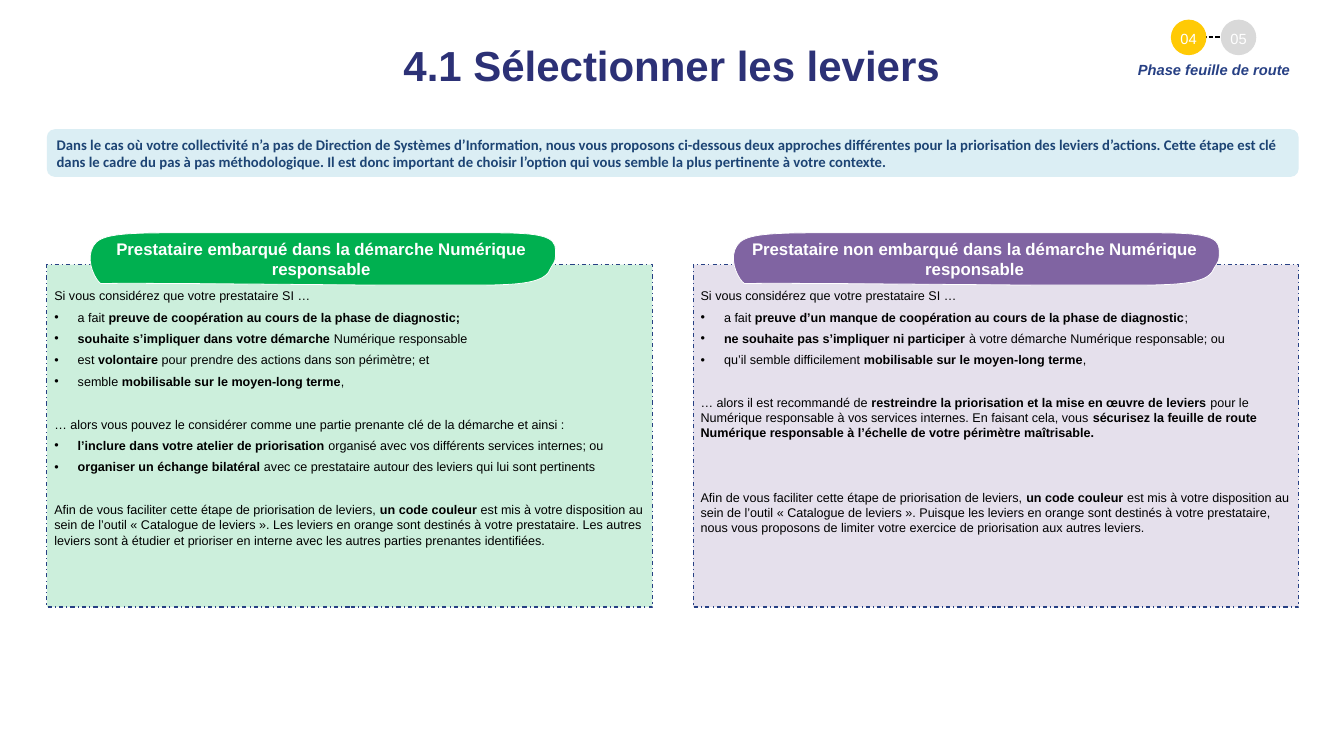
import pptx
import pptx.util
import pptx.dml.color
import pptx.enum.dml
import pptx.enum.shapes
import pptx.enum.text
import pptx.oxml.ns
from lxml import etree

Inches = pptx.util.Inches
Pt = pptx.util.Pt
RGBColor = pptx.dml.color.RGBColor
SHAPE = pptx.enum.shapes.MSO_SHAPE
DASH = pptx.enum.dml.MSO_LINE
ALIGN = pptx.enum.text.PP_ALIGN
ANCHOR = pptx.enum.text.MSO_ANCHOR
qn = pptx.oxml.ns.qn

WHITE = RGBColor(0xFF, 0xFF, 0xFF)
BLACK = RGBColor(0x00, 0x00, 0x00)
INDIGO = RGBColor(0x2C, 0x31, 0x76)
BLUE = RGBColor(0x27, 0x40, 0x84)
NAVY = RGBColor(0x1D, 0x44, 0x74)
PALE = RGBColor(0xDB, 0xEE, 0xF4)
GREEN = RGBColor(0x00, 0xB0, 0x50)
PURPLE = RGBColor(0x80, 0x64, 0xA2)
YELLOW = RGBColor(0xFF, 0xCA, 0x05)
GREY = RGBColor(0xD9, 0xD9, 0xD9)

SPACE = 6  # points before a paragraph
SKIP = 20.4  # points for each line left free

# Outline of a panel heading: x as a share of its width, y in inches.
# A single point is a straight side, three points are a Bézier curve.
START = (1, 0.23)
SIDES = [
    [(1, 0.37), (1, 0.36), (0.99, 0.46)],
    [(0.98, 0.64), (0.94, 0.69), (0.84, 0.69)],
    [(0.63, 0.69)],
    [(0.53, 0.69), (0.13, 0.66), (0.02, 0.67)],
    [(0.01, 0.63), (-0.01, 0.41), (0, 0.23)],
    [(0.01, 0.06), (0.03, 0), (0.16, 0)],
    [(0.87, 0)],
    [(0.97, 0), (1, 0.05), (1, 0.23)],
]

INTRO = (
    "Dans le cas où votre collectivité n’a pas de Direction de Systèmes d’Information, "
    "nous vous proposons ci-dessous deux approches différentes pour la priorisation des "
    "leviers d’actions. Cette étape est clé dans le cadre du pas à pas méthodologique. Il est "
    "donc important de choisir l’option qui vous semble la plus pertinente à votre contexte."
)
OPENING = "Si vous considérez que votre prestataire SI …"
COLOURS = (
    "Afin de vous faciliter cette étape de priorisation de leviers, **un code couleur **est mis "
    "à votre disposition au sein de l’outil « Catalogue de leviers ». "
)

# Each paragraph: free lines before it, bulleted or not, text with **bold** parts.
INSIDE = [
    (0, False, OPENING),
    (0, True, "a fait **preuve de coopération au cours de la phase de diagnostic;**"),
    (0, True, "**souhaite s’impliquer dans votre démarche **Numérique responsable"),
    (0, True, "est **volontaire** pour prendre des actions dans son périmètre; et"),
    (0, True, "semble **mobilisable sur le moyen-long terme**,"),
    (1, False, "… alors vous pouvez le considérer comme une partie prenante clé de la démarche "
               "et ainsi :"),
    (0, True, "**l’inclure dans votre atelier de priorisation **organisé avec vos différents "
              "services internes; ou"),
    (0, True, "**organiser un échange bilatéral **avec ce prestataire autour des leviers qui "
              "lui sont pertinents"),
    (1, False, COLOURS + "Les leviers en orange sont destinés à votre prestataire. Les autres "
               "leviers sont à étudier et prioriser en interne avec les autres parties "
               "prenantes identifiées."),
]
OUTSIDE = [
    (0, False, OPENING),
    (0, True, "a fait **preuve d’un manque de coopération au cours de la phase de "
              "diagnostic**;"),
    (0, True, "**ne souhaite pas s’impliquer ni participer **à votre démarche Numérique "
              "responsable; ou"),
    (0, True, "qu’il semble difficilement **mobilisable sur le moyen-long terme**,"),
    (1, False, "… alors il est recommandé de **restreindre la priorisation et la mise en œuvre "
               "de leviers **pour le Numérique responsable à vos services internes. En faisant "
               "cela, vous **sécurisez la feuille de route Numérique responsable à l’échelle de "
               "votre périmètre maîtrisable.**"),
    (2, False, COLOURS + "Puisque les leviers en orange sont destinés à votre prestataire, nous "
               "vous proposons de limiter votre exercice de priorisation aux autres leviers."),
]


def style(font, size, color, bold=False, italic=False, name="Arial"):
    font.name, font.size, font.bold, font.italic = name, Pt(size), bold, italic
    font.color.rgb = color


def label(shape, text, size, color, align=ALIGN.CENTER, **looks):
    frame = shape.text_frame
    frame.word_wrap = True
    frame.text = text
    para = frame.paragraphs[0]
    para.alignment = align
    style(para.runs[0].font, size, color, **looks)
    return frame


def block(shapes, kind, box, fill):
    """Add a filled shape without line or shadow."""
    shape = shapes.add_shape(kind, *map(Inches, box))
    shape.shadow.inherit = False
    shape.fill.solid()
    shape.fill.fore_color.rgb = fill
    shape.line.fill.background()
    return shape


def inset(frame, left, top, right, bottom):
    frame.margin_left, frame.margin_top = Inches(left), Inches(top)
    frame.margin_right, frame.margin_bottom = Inches(right), Inches(bottom)


def title(slide, box):
    head = slide.shapes.title
    head.left, head.top, head.width, head.height = map(Inches, box)
    frame = label(head, "4.1 Sélectionner les leviers", 40, INDIGO, bold=True)
    frame.vertical_anchor = ANCHOR.TOP
    inset(frame, 0, 0, 0, 0)


def phase(slide, box):
    """Add the step dots and, below them, the name of the phase."""
    left, top, width, height = box
    size, step = 0.47, 0.66
    start, mid = left + 0.64, top + 0.23
    steps = slide.shapes.add_group_shape().shapes
    link = steps.add_connector(
        pptx.enum.shapes.MSO_CONNECTOR.STRAIGHT,
        Inches(start), Inches(mid), Inches(start + 1.11), Inches(mid))
    link.line.color.rgb = BLACK
    link.line.width = Pt(1.5)
    link.line.dash_style = DASH.SQUARE_DOT
    etree.SubElement(link._element.spPr, qn("a:effectLst"))
    for i, fill in enumerate([YELLOW, GREY]):
        block(steps, SHAPE.OVAL, (start + i * step, top, size, size), fill)
    for i, num in enumerate(["04", "05"]):
        spot = (start + i * step, top - 0.04, size, 0.44)
        frame = label(steps.add_textbox(*map(Inches, spot)), num, 14, WHITE)
        frame.vertical_anchor = ANCHOR.MIDDLE
        frame.paragraphs[0].line_spacing = Pt(26.7)
    name = slide.shapes.add_textbox(
        Inches(left), Inches(top + 0.5), Inches(width), Inches(height - 0.5))
    label(name, "Phase feuille de route", 14, BLUE, bold=True, italic=True)


def banner(slide, box):
    shape = block(slide.shapes, SHAPE.ROUNDED_RECTANGLE, box, PALE)
    label(shape, INTRO, 14, NAVY, ALIGN.LEFT, bold=True, name="Calibri")


def bend(shape):
    """Turn the straight segments of each three-point side into one curve."""
    lines = list(shape._element.iter(qn("a:lnTo")))
    for side in SIDES:
        group, lines = lines[:len(side)], lines[len(side):]
        if len(side) == 3:
            arc = etree.Element(qn("a:cubicBezTo"))
            group[0].addprevious(arc)
            for line in group:
                arc.append(line[0])
                line.getparent().remove(line)


def heading(slide, left, top, width, text, fill):
    points = [START] + [point for side in SIDES for point in side]
    spots = [(Inches(left + x * width), Inches(top + y)) for x, y in points]
    pen = slide.shapes.build_freeform(*spots[0])
    pen.add_line_segments(spots[1:], close=True)
    shape = pen.convert_to_shape()
    bend(shape)
    shape.shadow.inherit = False
    shape.fill.solid()
    shape.fill.fore_color.rgb = fill
    shape.line.color.rgb = WHITE
    shape.line.width = Pt(0.75)
    label(shape, text, 16, WHITE, bold=True).vertical_anchor = ANCHOR.MIDDLE


def panel(slide, box, color, paras):
    shape = block(slide.shapes, SHAPE.RECTANGLE, box, color)
    tint = shape.fill._xPr.find(qn("a:solidFill"))[0]
    etree.SubElement(tint, qn("a:alpha")).set("val", "20000")
    shape.line.color.rgb = BLUE
    shape.line.width = Pt(1)
    shape.line.dash_style = DASH.DASH_DOT
    frame = shape.text_frame
    frame.word_wrap = True
    frame.vertical_anchor = ANCHOR.TOP
    inset(frame, 0.1, 0.31, 0.1, 0.05)
    for i, (free, dotted, text) in enumerate(paras):
        para = frame.add_paragraph() if i else frame.paragraphs[0]
        para.alignment = ALIGN.LEFT
        if i:
            para.space_before = Pt(SPACE + free * SKIP)
        if dotted:
            props = para._p.get_or_add_pPr()
            props.set("marL", str(Inches(0.31)))
            props.set("indent", str(-Inches(0.31)))
            etree.SubElement(props, qn("a:buFont")).set("typeface", "Arial")
            etree.SubElement(props, qn("a:buChar")).set("char", "•")
        for j, part in enumerate(text.split("**")):
            if part:
                run = para.add_run()
                run.text = part
                style(run.font, 12, BLACK, bold=j % 2 == 1)


def main():
    deck = pptx.Presentation()
    deck.slide_width, deck.slide_height = Inches(17.78), Inches(10)
    slide = deck.slides.add_slide(deck.slide_layouts[5])
    title(slide, (1.09, 0.52, 15.59, 0.67))
    phase(slide, (14.85, 0.26, 2.42, 0.84))
    panel(slide, (0.62, 3.5, 8.01, 4.53), GREEN, INSIDE)
    heading(slide, 1.21, 3.08, 6.14,
            "Prestataire embarqué dans la démarche Numérique responsable", GREEN)
    panel(slide, (9.17, 3.5, 8.01, 4.53), PURPLE, OUTSIDE)
    banner(slide, (0.62, 1.71, 16.56, 0.63))
    heading(slide, 9.72, 3.08, 6.41,
            "Prestataire non embarqué dans la démarche Numérique responsable", PURPLE)
    deck.save("out.pptx")


if __name__ == "__main__":
    main()
